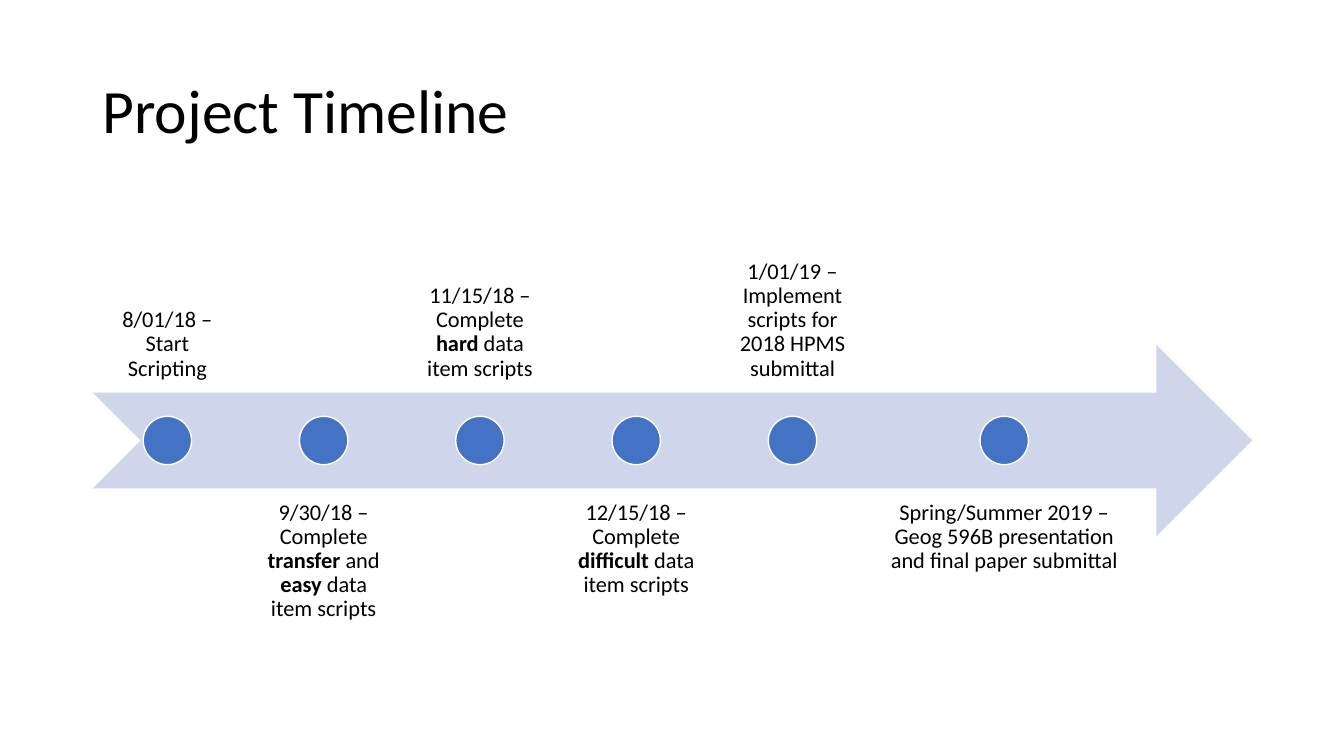
"""Build the project timeline slide."""
from pptx import Presentation
from pptx.dml.color import RGBColor as Rgb
from pptx.enum import shapes as sh, text as tx
from pptx.util import Inches, Pt

TITLE = "Project Timeline"
STEPS = [
    (1.48, ["8/01/18 – Start Scripting"]),
    (1.48, ["9/30/18 – Complete ", "transfer", " and ", "easy", " data item scripts"]),
    (1.48, ["11/15/18 – Complete ", "hard", " data item scripts"]),
    (1.48, ["12/15/18 – Complete ", "difficult", " data item scripts"]),
    (1.48, ["1/01/19 – Implement scripts for 2018 HPMS submittal"]),
    (2.58, ["Spring/Summer 2019 – Geog 596B presentation and final paper submittal"]),
]
THEME = {
    "font": "Calibri", "title": 44, "body": 16,
    "ink": "000000", "band": "CFD5EA", "dot": "4472C4", "rim": "FFFFFF",
}
LEFT, WIDE, GAP = 0.92, 11.5, 0.07
ABOVE, BELOW, HIGH = 2, 4.85, 1.9
BAND, DOT = 3.42, 0.48


def color(key):
    return Rgb.from_string(THEME[key])


def write(slide, box, runs, size, anchor, align, pad):
    """Add a text box whose every second run is bold."""
    frame = slide.shapes.add_textbox(*map(Inches, box)).text_frame
    side, edge = map(Inches, pad)
    form = {"word_wrap": True, "vertical_anchor": anchor,
            "margin_left": side, "margin_right": side,
            "margin_top": edge, "margin_bottom": edge}
    for key, value in form.items():
        setattr(frame, key, value)
    para = frame.paragraphs[0]
    para.alignment, para.line_spacing = align, 0.9
    for i, words in enumerate(runs):
        run = para.add_run()
        run.text = words
        look = {"name": THEME["font"], "size": Pt(THEME[size]), "bold": i % 2 == 1}
        for key, value in look.items():
            setattr(run.font, key, value)
        run.font.color.rgb = color("ink")


def draw(slide, kind, box, fill, rim=None):
    """Add a filled shape, outlined when a rim colour is given."""
    shape = slide.shapes.add_shape(kind, *map(Inches, box))
    shape.shadow.inherit = False
    shape.fill.solid()
    shape.fill.fore_color.rgb = color(fill)
    if rim:
        shape.line.color.rgb = color(rim)
        shape.line.width = Pt(1)
    else:
        shape.line.fill.background()


def main():
    """Lay out the title, the arrow and the steps."""
    deck = Presentation()
    deck.slide_width, deck.slide_height = Inches(13.33), Inches(7.5)
    slide = deck.slides.add_slide(deck.slide_layouts[6])
    kind, side, align = sh.MSO_SHAPE, tx.MSO_ANCHOR, tx.PP_ALIGN

    write(slide, (LEFT, 0.4, WIDE, 1.45), [TITLE], "title",
          side.MIDDLE, align.LEFT, (0.1, 0.05))
    draw(slide, kind.NOTCHED_RIGHT_ARROW, (LEFT, BAND, WIDE, HIGH), "band")

    x = LEFT
    for i, (wide, runs) in enumerate(STEPS):
        top, anchor = (BELOW, side.TOP) if i % 2 else (ABOVE, side.BOTTOM)
        write(slide, (x, top, wide, HIGH), runs, "body",
              anchor, align.CENTER, (0.12, 0.12))
        spot = (x + (wide - DOT) / 2, BAND + (HIGH - DOT) / 2, DOT, DOT)
        draw(slide, kind.OVAL, spot, "dot", "rim")
        x += wide + GAP

    deck.save("out.pptx")


if __name__ == "__main__":
    main()
